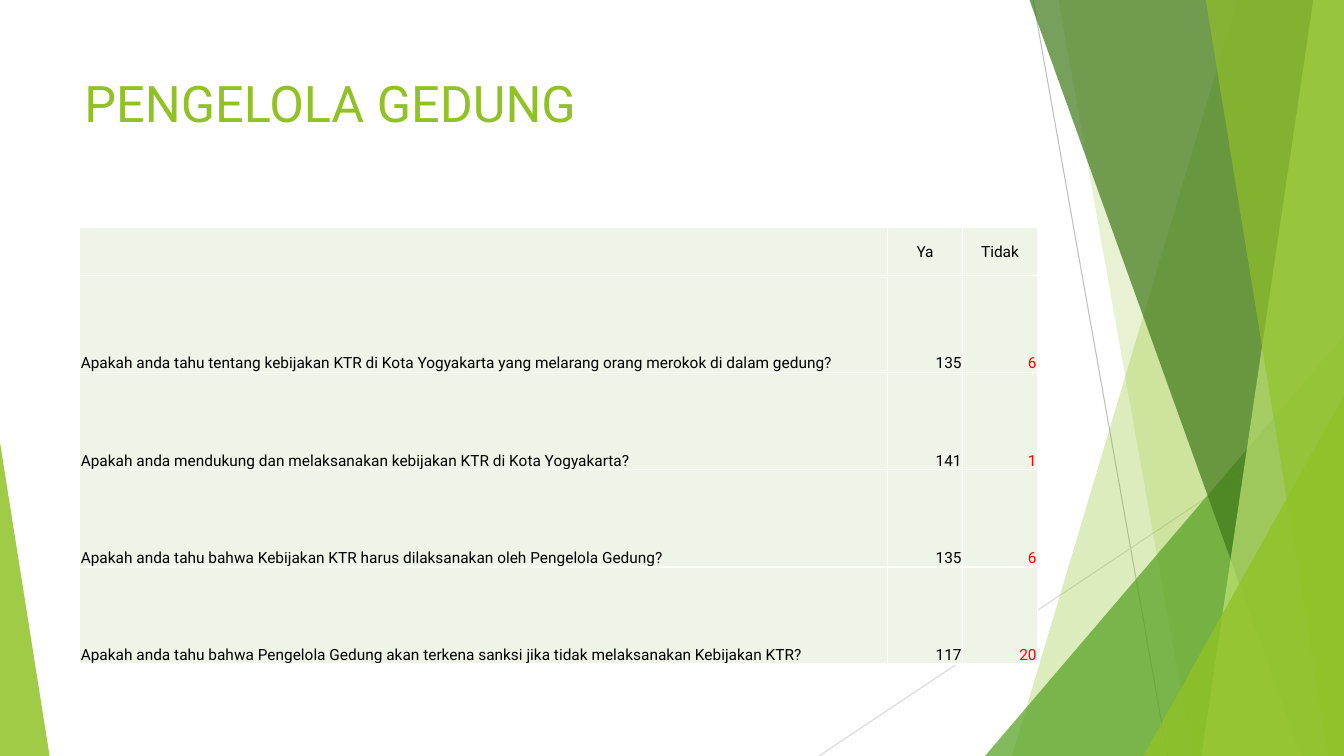
"""Build the slide on what building managers know about the KTR policy."""
from lxml import etree
from pptx import Presentation
from pptx.dml.color import RGBColor
from pptx.enum import shapes, text
from pptx.oxml import parse_xml
from pptx.oxml.ns import nsdecls, qn
from pptx.util import Pt


def paint(fill, colour, alpha=100):
    fill.solid()
    fill.fore_color.rgb = RGBColor.from_string(colour)
    if alpha < 100:
        tint = fill._xPr.find(qn("a:solidFill"))[0]
        etree.SubElement(tint, qn("a:alpha")).set("val", str(alpha * 1000))


def write(frame, words, size, colour, align):
    paragraph = frame.paragraphs[0]
    paragraph.alignment = align
    run = paragraph.add_run()
    run.text = words
    run.font.size = Pt(size)
    run.font.name = "Roboto"
    paint(run.font.fill, colour)


WIDTH, HEIGHT = 960, 540
GREEN = "90C226"
LEFT, CENTER, RIGHT = text.PP_ALIGN.LEFT, text.PP_ALIGN.CENTER, text.PP_ALIGN.RIGHT

deck = Presentation()
deck.slide_width, deck.slide_height = Pt(WIDTH), Pt(HEIGHT)
slide = deck.slides.add_slide(deck.slide_layouts[6])

rays = [
    ((738, 0, 834, HEIGHT), "BFBFBF"),
    ((WIDTH, 290, 585, HEIGHT), "D9D9D9"),
]
for ends, colour in rays:
    ray = slide.shapes.add_connector(shapes.MSO_CONNECTOR.STRAIGHT, *map(Pt, ends))
    ray.line.width = Pt(0.75)
    paint(ray.line.fill, colour)
    etree.SubElement(ray._element.spPr, qn("a:effectLst"))

# Facets hold (top x, bottom x); triangles hold (left, top, width, apex).
facets = [
    ((884.2, 722.9), GREEN, 30),
    ((756, 851.8), GREEN, 20),
    ((703.6, 239.8, 256.4, 1), "54A021", 72),
    ((735.2, 929.5), "3F7819", 70),
    ((938.2, 858.2), "C0E474", 70),
    ((861.2, 949), GREEN, 65),
    ((816.6, 283, 143.4, 1), GREEN, 80),
    ((0, 316, 35.4, 0), GREEN, 85),
]
for outline, colour, alpha in facets:
    if len(outline) == 2:
        top_x, bottom_x = outline
        builder = slide.shapes.build_freeform(Pt(top_x), Pt(-0.6))
        corners = [(WIDTH, -0.6), (WIDTH, HEIGHT), (bottom_x, HEIGHT)]
        builder.add_line_segments([(Pt(x), Pt(y)) for x, y in corners], close=True)
        facet = builder.convert_to_shape()
    else:
        left, top, width, apex = outline
        facet = slide.shapes.add_shape(
            shapes.MSO_SHAPE.ISOSCELES_TRIANGLE,
            Pt(left), Pt(top), Pt(width), Pt(HEIGHT - top))
        facet.adjustments[0] = apex
    facet.shadow.inherit = False
    facet.line.fill.background()
    paint(facet.fill, colour, alpha)

title = slide.shapes.add_textbox(Pt(53.3), Pt(48.2), Pt(676.8), Pt(103.7)).text_frame
title.word_wrap = True
write(title, "PENGELOLA GEDUNG", 36, GREEN, LEFT)

answers = [
    ("", "Ya", "Tidak"),
    ("Apakah anda tahu tentang kebijakan KTR di Kota Yogyakarta yang melarang orang merokok di dalam gedung?", "135", "6"),
    ("Apakah anda mendukung dan melaksanakan kebijakan KTR di Kota Yogyakarta?", "141", "1"),
    ("Apakah anda tahu bahwa Kebijakan KTR harus dilaksanakan oleh Pengelola Gedung?", "135", "6"),
    ("Apakah anda tahu bahwa Pengelola Gedung akan terkena sanksi jika tidak melaksanakan Kebijakan KTR?", "117", "20"),
]
column_widths = [577, 53.6, 53.6]
row_heights = [34.4] + [69.4] * 4
survey = slide.shapes.add_table(
    len(answers), len(column_widths), Pt(57), Pt(162.4),
    Pt(sum(column_widths)), Pt(sum(row_heights))).table
survey.first_row = survey.horz_banding = False
for column, width in zip(survey.columns, column_widths):
    column.width = Pt(width)

for r, answer in enumerate(answers):
    survey.rows[r].height = Pt(row_heights[r])
    for c, words in enumerate(answer):
        cell = survey.cell(r, c)
        cell.margin_left = cell.margin_right = cell.margin_top = Pt(0.7)
        cell.margin_bottom = 0
        cell.vertical_anchor = text.MSO_ANCHOR.BOTTOM if r else text.MSO_ANCHOR.MIDDLE
        paint(cell.fill, "EEF4E8")
        for i, side in enumerate(("lnL", "lnR", "lnT", "lnB")):
            border = parse_xml(f'<a:{side} {nsdecls("a")} w="12700"><a:solidFill>'
                               f'<a:srgbClr val="FFFFFF"/></a:solidFill></a:{side}>')
            cell._tc.tcPr.insert(i, border)
        if words:
            align = CENTER if r == 0 else RIGHT if c else LEFT
            write(cell.text_frame, words, 11, "FF0000" if r and c == 2 else "000000", align)

deck.save("out.pptx")
